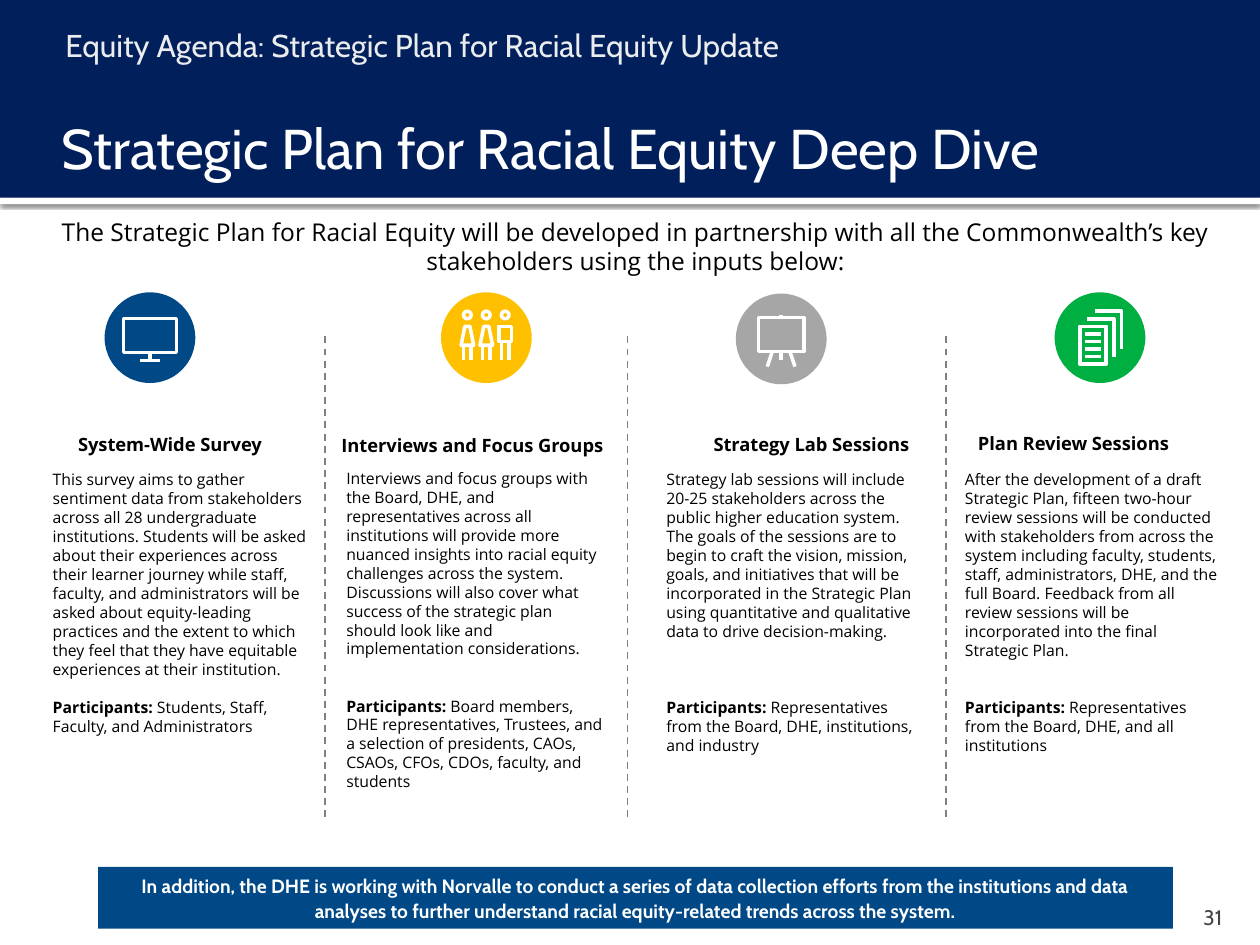
"""Build the slide on the four inputs to the strategic plan for racial equity."""
import math

import lxml.etree
import pptx
import pptx.dml.color
import pptx.enum.dml
import pptx.enum.shapes
import pptx.enum.text
import pptx.oxml.ns
import pptx.util

Inches = pptx.util.Inches
Pt = pptx.util.Pt
ALIGN = pptx.enum.text.PP_ALIGN
ANCHOR = pptx.enum.text.MSO_ANCHOR
SHAPES = pptx.enum.shapes.MSO_SHAPE

COLORS = {
    "navy": "001F5B", "blue": "004986", "yellow": "FFC000", "gray": "A6A6A6",
    "green": "00AF41", "white": "FFFFFF", "black": "000000", "pale": "EAECEE",
    "number": "454545", "divider": "808080",
}
BODY_LINE = 10.9
ICON_SIZE = 0.72


def box_stroke(left, top, right, bottom):
    """Return the closed outline of a rectangle."""
    return [(left, top), (right, top), (right, bottom), (left, bottom), (left, top)]


def ring_stroke(center_x, center_y, radius, steps=16):
    """Return a closed outline that is close to a circle."""
    angles = [2 * math.pi * step / steps for step in range(steps + 1)]
    return [(center_x + radius * math.cos(a), center_y + radius * math.sin(a)) for a in angles]


def person_strokes(x, shoulder, hip, hip_y):
    """Return the head, body and legs of one figure."""
    body = [(x - shoulder, -0.09), (x + shoulder, -0.09), (x + hip, hip_y),
            (x - hip, hip_y), (x - shoulder, -0.09)]
    legs = [[(x + side, hip_y), (x + side, 0.18)] for side in (-0.03, 0.03)]
    return [ring_stroke(x, -0.18, 0.03), body, *legs]


MONITOR = [box_stroke(-0.21, -0.15, 0.21, 0.12), [(0, 0.12), (0, 0.18)], [(-0.08, 0.18), (0.08, 0.18)]]
PEOPLE = [*person_strokes(-0.15, 0.02, 0.05, 0.06), *person_strokes(0, 0.02, 0.05, 0.06),
          *person_strokes(0.15, 0.05, 0.05, 0.03)]
EASEL = [box_stroke(-0.18, -0.17, 0.18, 0.1), [(0, -0.19), (0, -0.17)], [(-0.07, 0.1), (-0.11, 0.22)],
         [(0, 0.1), (0, 0.17)], [(0.07, 0.1), (0.11, 0.22)]]
DOCUMENTS = [box_stroke(-0.16, -0.09, 0.05, 0.21),
             *[[(-0.12, -0.03 + 0.06 * row), (0.01, -0.03 + 0.06 * row)] for row in range(4)],
             *[[(-0.1 + shift, -0.15 - shift), (0.11 + shift, -0.15 - shift), (0.11 + shift, 0.15 - shift)]
               for shift in (0, 0.06)]]

COLUMNS = [
    {"heading": "System-Wide Survey", "heading_at": (0.32, 3.39, 2.06, 0.28), "body_at": (0.32, 3.68, 2.25, 2.37),
     "color": "blue", "icon_at": (1.19, 2.68), "icon": MONITOR, "gap_lines": 1,
     "body": "This survey aims to gather sentiment data from stakeholders across all 28 undergraduate institutions. "
             "Students will be asked about their experiences across their learner journey while staff, faculty, and "
             "administrators will be asked about equity-leading practices and the extent to which they feel that they "
             "have equitable experiences at their institution.",
     "participants": "Students, Staff, Faculty, and Administrators"},
    {"heading": "Interviews and Focus Groups", "heading_at": (2.5, 3.4, 2.5, 0.28), "body_at": (2.65, 3.67, 2.25, 2.68),
     "color": "yellow", "icon_at": (3.86, 2.68), "icon": PEOPLE, "gap_lines": 2,
     "body": "Interviews and focus groups with the Board, DHE, and representatives across all institutions will "
             "provide more nuanced insights into racial equity challenges across the system. Discussions will also "
             "cover what success of the strategic plan should look like and implementation considerations.",
     "participants": "Board members, DHE representatives, Trustees, and a selection of presidents, CAOs, CSAOs, "
                     "CFOs, CDOs, faculty, and students"},
    {"heading": "Strategy Lab Sessions", "heading_at": (5.19, 3.39, 2.5, 0.28), "body_at": (5.19, 3.68, 2.25, 2.37),
     "color": "gray", "icon_at": (6.2, 2.69), "icon": EASEL, "gap_lines": 3,
     "body": "Strategy lab sessions will include 20-25 stakeholders across the public higher education system. "
             "The goals of the sessions are to begin to craft the vision, mission, goals, and initiatives that will "
             "be incorporated in the Strategic Plan using quantitative and qualitative data to drive decision-making.",
     "participants": "Representatives from the Board, DHE, institutions, and industry"},
    {"heading": "Plan Review Sessions", "heading_at": (7.56, 3.38, 1.92, 0.28), "body_at": (7.56, 3.68, 2.25, 2.37),
     "color": "green", "icon_at": (8.73, 2.68), "icon": DOCUMENTS, "gap_lines": 2,
     "body": "After the development of a draft Strategic Plan, fifteen two-hour review sessions will be conducted "
             "with stakeholders from across the system including faculty, students, staff, administrators, DHE, and "
             "the full Board. Feedback from all review sessions will be incorporated into the final Strategic Plan.",
     "participants": "Representatives from the Board, DHE, and all institutions"},
]


def rgb(name):
    """Return a named color."""
    return pptx.dml.color.RGBColor.from_string(COLORS[name])


def style_paragraph(paragraph, size, font="Open Sans", color="black", bold=False, align=ALIGN.LEFT):
    """Set the font and alignment of a paragraph."""
    paragraph.alignment = align
    paragraph.font.name = font
    paragraph.font.size = Pt(size)
    paragraph.font.bold = bold
    paragraph.font.color.rgb = rgb(color)


def set_frame(frame, insets, anchor):
    """Set wrapping, insets and anchor of a text frame."""
    frame.word_wrap = True
    frame.vertical_anchor = anchor
    frame.margin_left, frame.margin_top, frame.margin_right, frame.margin_bottom = map(Inches, insets)


def add_text(slide, at, text, size, insets=(0.1, 0.05, 0.1, 0.05), anchor=ANCHOR.TOP, **style):
    """Add a text box with one paragraph and return its text frame."""
    frame = slide.shapes.add_textbox(*map(Inches, at)).text_frame
    set_frame(frame, insets, anchor)
    frame.paragraphs[0].text = text
    style_paragraph(frame.paragraphs[0], size, **style)
    return frame


def add_filled(slide, kind, at, color):
    """Add a filled preset shape without outline or shadow."""
    shape = slide.shapes.add_shape(kind, *map(Inches, at))
    shape.shadow.inherit = False
    shape.fill.solid()
    shape.fill.fore_color.rgb = rgb(color)
    shape.line.fill.background()
    return shape


def add_header(slide):
    """Add the navy band and the white strip that casts a shadow below it."""
    strip = add_filled(slide, SHAPES.RECTANGLE, (0, 1.57, 10, 0.05), "white")
    effects = strip._element.spPr.find(pptx.oxml.ns.qn("a:effectLst"))
    shadow = lxml.etree.SubElement(effects, pptx.oxml.ns.qn("a:outerShdw"), blurRad=str(Pt(2.5)),
                                   dist=str(Pt(0.8)), dir="5400000", algn="t", rotWithShape="0")
    color = lxml.etree.SubElement(shadow, pptx.oxml.ns.qn("a:srgbClr"), val=COLORS["black"])
    lxml.etree.SubElement(color, pptx.oxml.ns.qn("a:alpha"), val="60000")
    add_filled(slide, SHAPES.RECTANGLE, (0, 0, 10, 1.57), "navy")


def add_icon(slide, center, color, strokes):
    """Add a colored disc with a white line drawing on it."""
    x, y = center
    add_filled(slide, SHAPES.OVAL, (x - ICON_SIZE / 2, y - ICON_SIZE / 2, ICON_SIZE, ICON_SIZE), color)
    contours = [[(Inches(x + dx), Inches(y + dy)) for dx, dy in stroke] for stroke in strokes]
    builder = slide.shapes.build_freeform(*contours[0][0])
    for contour in contours:
        builder.move_to(*contour[0])
        builder.add_line_segments(contour[1:], close=contour[0] == contour[-1])
    drawing = builder.convert_to_shape()
    drawing.shadow.inherit = False
    drawing.fill.background()
    drawing.line.color.rgb = rgb("white")
    drawing.line.width = Pt(2)


def add_column(slide, column):
    """Add the icon, heading, description and participants of one input."""
    add_icon(slide, column["icon_at"], column["color"], column["icon"])
    add_text(slide, column["heading_at"], column["heading"], 10.5, bold=True, align=ALIGN.CENTER)
    frame = add_text(slide, column["body_at"], column["body"], 9)
    paragraph = frame.add_paragraph()
    style_paragraph(paragraph, 9)
    paragraph.space_before = Pt(BODY_LINE * column["gap_lines"])
    for text, bold in (("Participants: ", True), (column["participants"], False)):
        run = paragraph.add_run()
        run.text = text
        run.font.bold = bold


def add_divider(slide, x):
    """Add a dashed vertical line between two columns."""
    line = slide.shapes.add_connector(pptx.enum.shapes.MSO_CONNECTOR.STRAIGHT,
                                      Inches(x), Inches(2.67), Inches(x), Inches(6.5))
    lxml.etree.SubElement(line._element.spPr, pptx.oxml.ns.qn("a:effectLst"))
    line.line.color.rgb = rgb("divider")
    line.line.width = Pt(1)
    line.line.dash_style = pptx.enum.dml.MSO_LINE.DASH


def add_banner(slide, text):
    """Add the blue closing statement."""
    banner = add_filled(slide, SHAPES.RECTANGLE, (0.78, 6.88, 8.53, 0.49), "blue")
    set_frame(banner.text_frame, (0.07,) * 4, ANCHOR.MIDDLE)
    paragraph = banner.text_frame.paragraphs[0]
    paragraph.text = text
    paragraph.line_spacing = 1.06
    style_paragraph(paragraph, 11, "Cabin", "white", True, ALIGN.CENTER)


def main():
    """Build and save the presentation."""
    presentation = pptx.Presentation()
    presentation.slide_width, presentation.slide_height = Inches(10), Inches(7.5)
    slide = presentation.slides.add_slide(presentation.slide_layouts[6])
    add_header(slide)
    add_text(slide, (9, 7.08, 0.8, 0.3), "31", 12, (0.1, 0.05, 0.1, 0), ANCHOR.BOTTOM,
             font="Cabin", color="number", align=ALIGN.RIGHT)
    add_text(slide, (0.33, 0.11, 9.34, 0.5), "Equity Agenda: Strategic Plan for Racial Equity Update", 18,
             (0.19, 0.1, 0.1, 0.05), font="Cabin", color="pale")
    add_text(slide, (0.42, 0.65, 9.17, 0.79), "Strategic Plan for Racial Equity Deep Dive", 32,
             (0.07, 0.25, 0, 0), ANCHOR.MIDDLE, font="Cabin", color="white")
    add_text(slide, (0.42, 1.71, 9.25, 0.48),
             "The Strategic Plan for Racial Equity will be developed in partnership with all the Commonwealth’s key "
             "stakeholders using the inputs below:", 14, (0, 0.01, 0, 0), align=ALIGN.CENTER)
    for column in COLUMNS:
        add_column(slide, column)
    for x in (2.58, 4.98, 7.51):
        add_divider(slide, x)
    add_banner(slide, "In addition, the DHE is working with Norvalle to conduct a series of data collection efforts "
                      "from the institutions and data analyses to further understand racial equity-related trends "
                      "across the system.")
    presentation.save("out.pptx")


if __name__ == "__main__":
    main()
